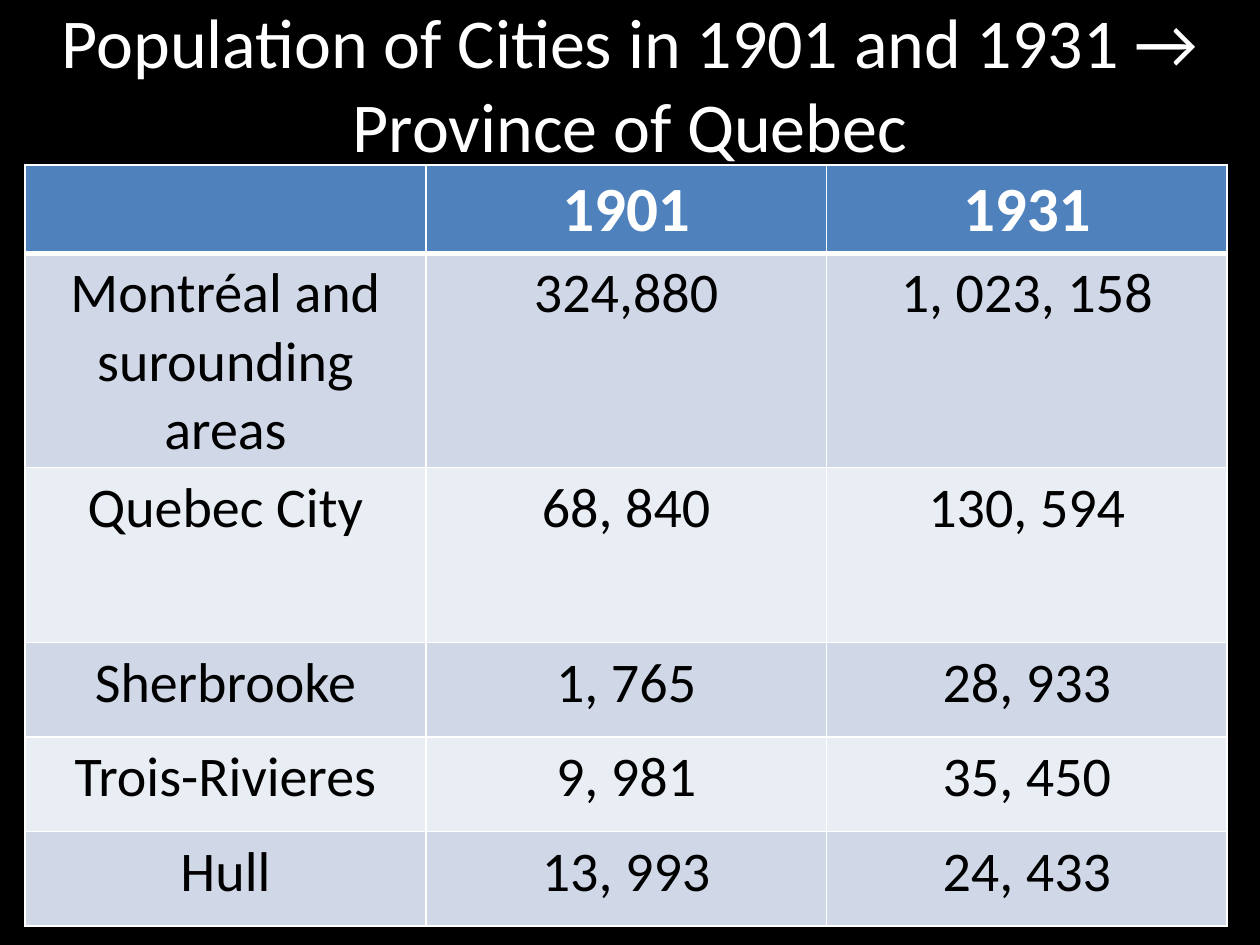
"""Build a slide with a table of city populations in Quebec."""
from lxml import etree
from pptx import Presentation
from pptx.dml.color import RGBColor
from pptx.enum.text import MSO_ANCHOR, PP_ALIGN
from pptx.oxml.ns import qn
from pptx.util import Inches, Pt

CENTER = PP_ALIGN.CENTER
MIDDLE = MSO_ANCHOR.MIDDLE
BLACK = RGBColor(0, 0, 0)
WHITE = RGBColor(255, 255, 255)
HEADER_BLUE = RGBColor(0x4F, 0x81, 0xBD)
BANDS = [RGBColor(0xE9, 0xED, 0xF4), RGBColor(0xD0, 0xD8, 0xE8)]
FONT = "Calibri"

TITLE = "Population of Cities in 1901 and 1931 → Province of Quebec"
TITLE_SIZE = 40
ROWS = [
    ("", "1901", "1931"),
    ("Montréal and surounding areas", "324,880", "1, 023, 158"),
    ("Quebec City", "68, 840", "130, 594"),
    ("Sherbrooke", "1, 765", "28, 933"),
    ("Trois-Rivieres", "9, 981", "35, 450"),
    ("Hull", "13, 993", "24, 433"),
]
ROW_HEIGHTS = [0.48, 1.39, 1.39, 0.75, 0.75, 0.75]
COLUMN_WIDTH = 3.18


def write(paragraph, text, size, color, bold=False):
    paragraph.alignment = CENTER
    span = paragraph.add_run()
    span.text = text
    span.font.name = FONT
    span.font.size = Pt(size)
    span.font.bold = bold
    span.font.color.rgb = color


def set_borders(cell, bottom_width):
    properties = cell._tc.get_or_add_tcPr()
    widths = {"a:lnL": 1, "a:lnR": 1, "a:lnT": 1, "a:lnB": bottom_width}
    for position, (tag, width) in enumerate(widths.items()):
        line = etree.Element(qn(tag), w=str(Pt(width)))
        fill = etree.SubElement(line, qn("a:solidFill"))
        etree.SubElement(fill, qn("a:srgbClr"), val=str(WHITE))
        properties.insert(position, line)


def add_title(page):
    box = page.shapes.add_textbox(Inches(0), Inches(0.36), Inches(10), Inches(1.25))
    frame = box.text_frame
    frame.word_wrap = True
    frame.vertical_anchor = MIDDLE
    paragraph = frame.paragraphs[0]
    write(paragraph, TITLE, TITLE_SIZE, WHITE)
    paragraph.add_line_break()
    etree.SubElement(paragraph._p, qn("a:endParaRPr"), sz=str(TITLE_SIZE * 100))


def add_population_table(page):
    columns = len(ROWS[0])
    table = page.shapes.add_table(
        len(ROWS), columns, Inches(0.2), Inches(1.31),
        Inches(COLUMN_WIDTH * columns), Inches(sum(ROW_HEIGHTS)),
    ).table
    for column in table.columns:
        column.width = Inches(COLUMN_WIDTH)
    for index, (values, height) in enumerate(zip(ROWS, ROW_HEIGHTS)):
        header = index == 0
        table.rows[index].height = Inches(height)
        for cell, value in zip(table.rows[index].cells, values):
            cell.fill.solid()
            cell.fill.fore_color.rgb = HEADER_BLUE if header else BANDS[index % 2]
            set_borders(cell, 3 if header else 1)
            if value:
                write(cell.text_frame.paragraphs[0], value,
                      36 if header else 32, WHITE if header else BLACK, header)


def main():
    deck = Presentation()
    deck.slide_width, deck.slide_height = Inches(10), Inches(7.5)
    page = deck.slides.add_slide(deck.slide_layouts[6])
    page.background.fill.solid()
    page.background.fill.fore_color.rgb = BLACK
    add_title(page)
    add_population_table(page)
    deck.save("out.pptx")


if __name__ == "__main__":
    main()
